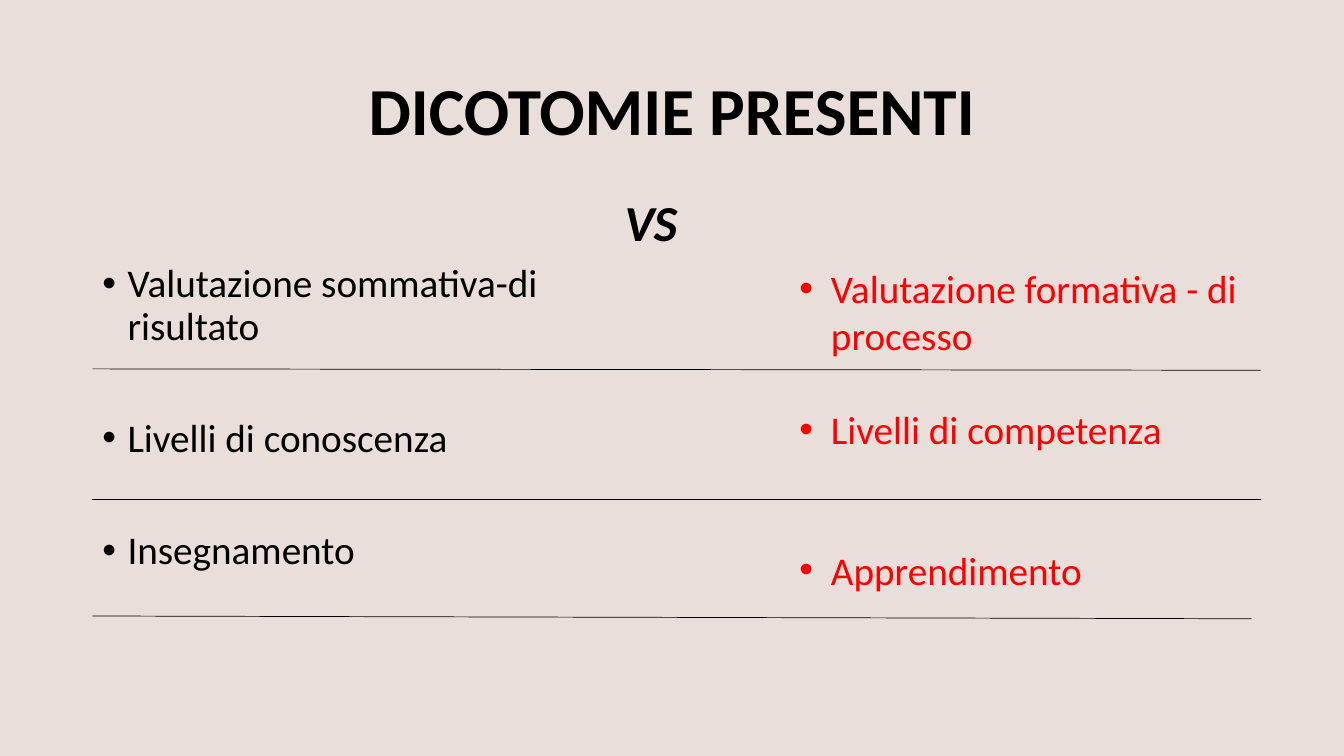
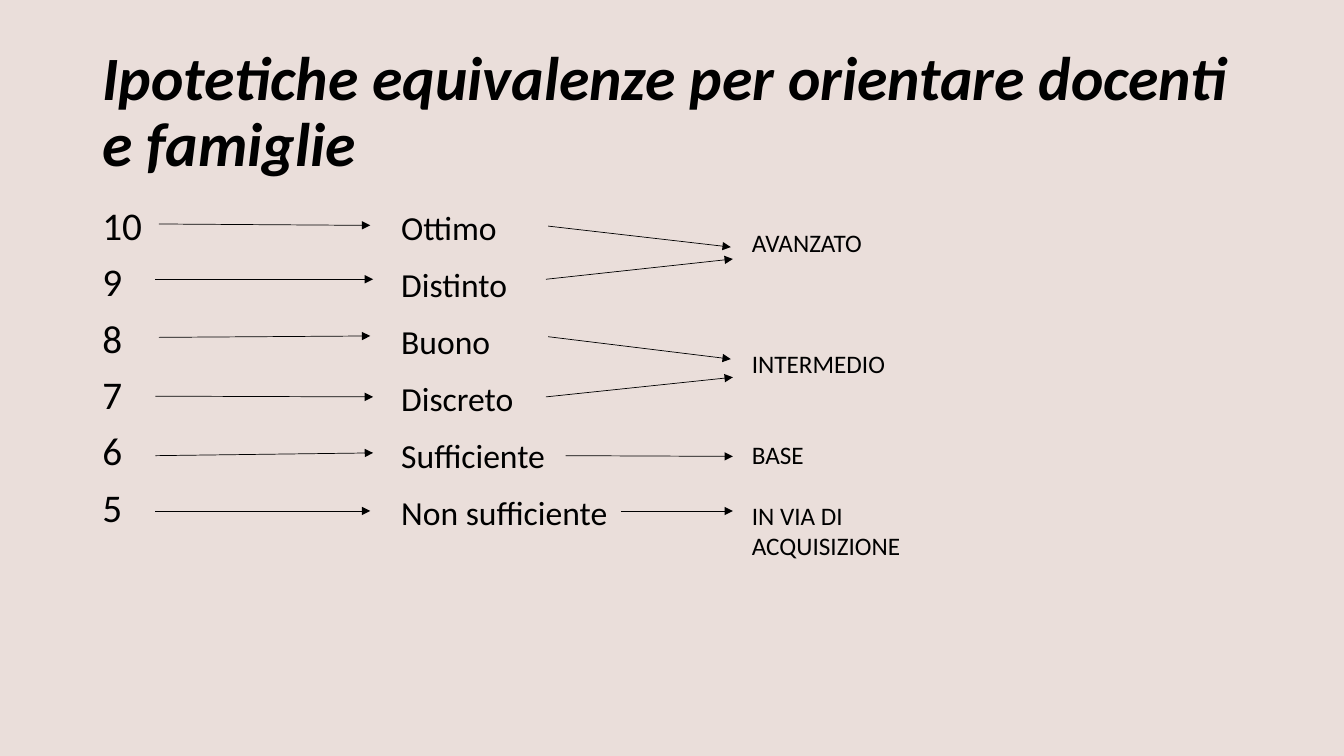
from lxml import etree
from pptx import Presentation
from pptx.dml import color
from pptx.enum import shapes, text
from pptx.oxml import ns
from pptx.util import Pt

COLOURS = {"page": "EADEDA", "ink": "000000", "accent": "FF0000"}
FONT = "Calibri"
TITLE_ONLY = 5

# Each line or arrow: start x, start y, end x, end y
RULES = [(66, 263.5, 900.5, 264.5), (66, 356.5, 900.5, 356.5), (66, 440, 894, 442)]
GRADE_ARROWS = [
    (113.5, 160, 264.5, 161),
    (111, 199.5, 266.5, 199.5),
    (113.5, 241, 264.5, 240),
    (111, 283, 266.5, 283.5),
    (111, 325.5, 266.5, 323.5),
    (111, 365, 264.5, 365),
]
LEVEL_ARROWS = [
    (391.5, 161.5, 522, 176.5),
    (390, 199.5, 523.5, 185),
    (391.5, 240.5, 522, 256.5),
    (390, 283.5, 523.5, 269.5),
    (404, 325.5, 523.5, 326),
    (443.5, 365, 523.5, 365),
]


def rgb(name):
    return color.RGBColor.from_string(COLOURS[name])


def set_all(target, values):
    for name, value in values.items():
        setattr(target, name, value)


def add_child(parent, tag, **attributes):
    etree.SubElement(parent, ns.qn(tag), attributes)


def style_font(span, size, colour="ink", **emphasis):
    set_all(span.font, {"name": FONT, "size": Pt(size), **emphasis})
    span.font.color.rgb = rgb(colour)


def add_page(deck, title, size, align, **emphasis):
    page = deck.slides.add_slide(deck.slide_layouts[TITLE_ONLY])
    box = page.shapes.title
    set_all(box, {"left": Pt(66), "top": Pt(28.75), "width": Pt(828), "height": Pt(104.4)})
    set_all(box.text_frame, {"word_wrap": True, "auto_size": text.MSO_AUTO_SIZE.NONE,
                             "vertical_anchor": text.MSO_ANCHOR.MIDDLE})
    para = box.text_frame.paragraphs[0]
    set_all(para, {"alignment": align, "line_spacing": 0.9})
    span = para.add_run()
    span.text = title
    style_font(span, size, bold=True, **emphasis)
    return page


def add_bullet(para, indent):
    properties = para._p.get_or_add_pPr()
    properties.set("marL", str(Pt(indent)))
    properties.set("indent", str(-Pt(indent)))
    add_child(properties, "a:buFont", typeface="Arial")
    add_child(properties, "a:buChar", char="•")


def add_text(page, place, items, size, spacing=1.0, bullet_indent=None, **font):
    """Write items, pairs of wording and space before, as paragraphs of one box."""
    box = page.shapes.add_textbox(*map(Pt, place))
    frame = box.text_frame
    frame.word_wrap = True
    for index, (wording, gap) in enumerate(items):
        para = frame.add_paragraph() if index else frame.paragraphs[0]
        set_all(para, {"line_spacing": spacing, "space_before": Pt(gap)})
        if bullet_indent:
            add_bullet(para, bullet_indent)
        span = para.add_run()
        span.text = wording
        style_font(span, size, **font)


def evenly(wordings, gap):
    return [(wording, gap if index else 0) for index, wording in enumerate(wordings)]


def add_lines(page, ends, arrow=False):
    for points in ends:
        line = page.shapes.add_connector(shapes.MSO_CONNECTOR.STRAIGHT, *map(Pt, points))
        line.line.width = Pt(0.5)
        line.line.color.rgb = rgb("ink")
        if arrow:
            add_child(line.line._get_or_add_ln(), "a:tailEnd", type="triangle")
        add_child(line._element.spPr, "a:effectLst")


def build_dichotomies(deck):
    page = add_page(deck, "DICOTOMIE PRESENTI", 48, text.PP_ALIGN.CENTER)
    add_text(page, (66, 185, 373, 342.5),
             evenly(["Valutazione sommativa-di risultato", "Livelli di conoscenza",
                     "Insegnamento"], 50),
             28, spacing=0.9, bullet_indent=18)
    add_text(page, (564, 185, 371, 245),
             [("Valutazione formativa - di processo", 0), ("Livelli di competenza", 33.5),
              ("Apprendimento", 67)],
             28, bullet_indent=22.5, colour="accent")
    add_text(page, (439, 133, 109.5, 51), [("VS", 0)], 36, bold=True, italic=True)
    add_lines(page, RULES)


def build_equivalences(deck):
    page = add_page(deck, "Ipotetiche equivalenze per orientare docenti e famiglie",
                    44, text.PP_ALIGN.LEFT, italic=True)
    add_text(page, (66, 144, 828, 342.5), evenly(["10", "9", "8", "7", "6", "5"], 10),
             28, spacing=0.9)
    add_lines(page, GRADE_ARROWS, arrow=True)
    add_text(page, (279.5, 144, 182, 242.5),
             evenly(["Ottimo", "Distinto", "Buono", "Discreto", "Sufficiente",
                     "Non sufficiente"], 12), 24)
    add_lines(page, LEVEL_ARROWS, arrow=True)
    add_text(page, (530, 159, 138, 247),
             [("AVANZATO", 0), ("INTERMEDIO", 65), ("BASE", 43),
              ("IN VIA DI ACQUISIZIONE", 22)], 18)


def main():
    deck = Presentation()
    set_all(deck, {"slide_width": Pt(960), "slide_height": Pt(540)})
    background = deck.slide_master.background.fill
    background.solid()
    background.fore_color.rgb = rgb("page")
    build_dichotomies(deck)
    build_equivalences(deck)
    deck.save("out.pptx")


if __name__ == "__main__":
    main()
